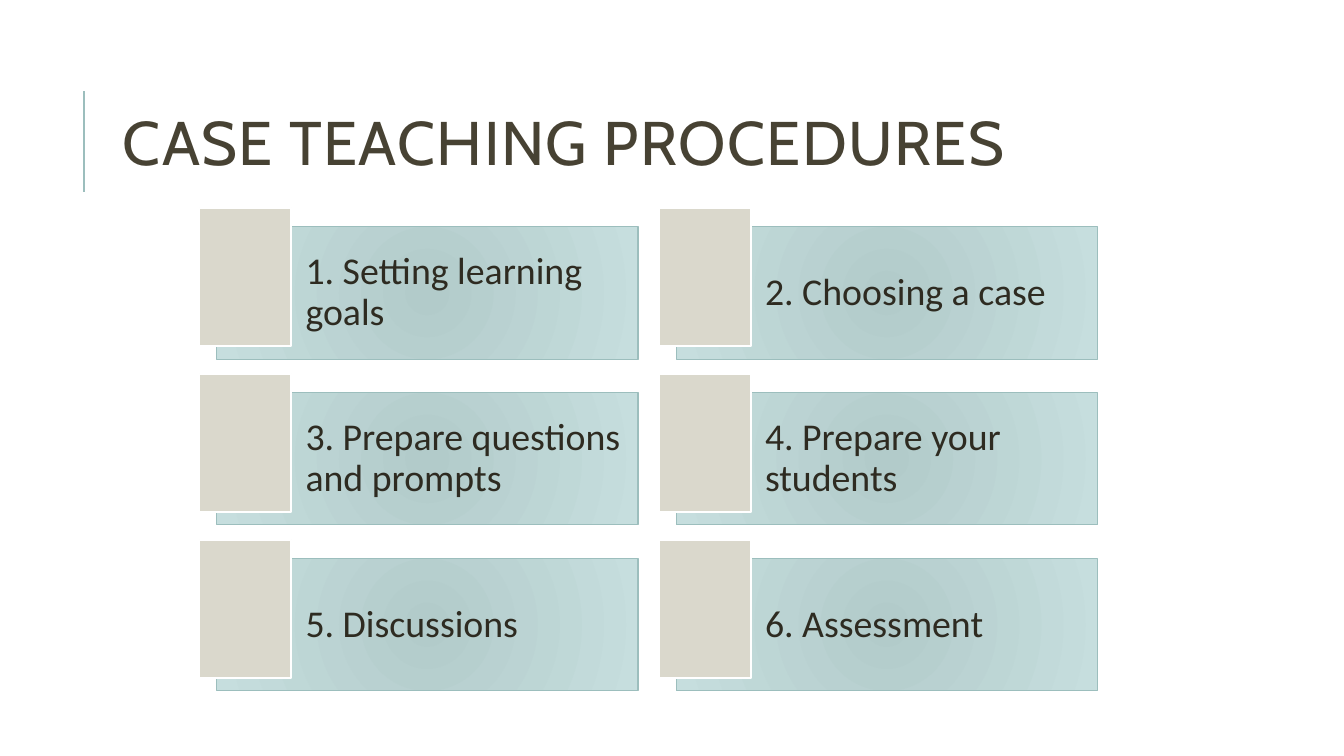
from lxml import etree
from pptx import Presentation
from pptx.dml.color import RGBColor
from pptx.enum import shapes, text
from pptx.oxml import ns
from pptx.util import Cm, Pt

TITLE = "CASE TEACHING PROCEDURES"
STEPS = [
    "1. Setting learning goals",
    "2. Choosing a case",
    "3. Prepare questions and prompts",
    "4. Prepare your students",
    "5. Discussions",
    "6. Assessment",
]

TITLE_COLOR = RGBColor(0x47, 0x42, 0x33)
STEP_COLOR = RGBColor(0x2E, 0x2B, 0x21)
TEAL = RGBColor(0x9C, 0xBE, 0xBD)
CARD_CENTER = RGBColor(0xB2, 0xCB, 0xCA)
CARD_EDGE = RGBColor(0xC6, 0xDE, 0xDE)
TAB_FILL = RGBColor(0xDA, 0xD8, 0xCC)
WHITE = RGBColor(0xFF, 0xFF, 0xFF)

COLUMNS = 2
CARD_LEFT, CARD_TOP = 5.46, 5.72
CARD_WIDTH, CARD_HEIGHT = 10.62, 3.33
COLUMN_STEP, ROW_STEP = 11.58, 4.18
TAB_SHIFT_X, TAB_SHIFT_Y = 0.43, 0.48
TAB_WIDTH, TAB_HEIGHT = 2.31, 3.48


def add_box(page, left, top, width, height, line_color, line_width):
    box = page.shapes.add_shape(
        shapes.MSO_SHAPE.RECTANGLE, Cm(left), Cm(top), Cm(width), Cm(height))
    box.shadow.inherit = False
    box.line.color.rgb = line_color
    box.line.width = Pt(line_width)
    return box


def fill_radial(box, center, edge):
    box.fill.gradient()
    for stop, color in zip(box.fill.gradient_stops, (center, edge)):
        stop.color.rgb = color
    gradient = box._element.spPr.find(ns.qn("a:gradFill"))
    gradient.remove(gradient.find(ns.qn("a:lin")))
    circle = etree.SubElement(gradient, ns.qn("a:path"), {"path": "circle"})
    etree.SubElement(circle, ns.qn("a:fillToRect"), dict.fromkeys("ltrb", "50000"))


def style_text(frame, words, font_name, size, color, spacing):
    frame.text = words
    frame.word_wrap = True
    frame.auto_size = text.MSO_AUTO_SIZE.NONE
    frame.vertical_anchor = text.MSO_ANCHOR.MIDDLE
    para = frame.paragraphs[0]
    para.alignment = text.PP_ALIGN.LEFT
    para.line_spacing = spacing
    para.font.name = font_name
    para.font.size = Pt(size)
    para.font.color.rgb = color
    return para


def add_title(page):
    rule = page.shapes.add_connector(
        shapes.MSO_CONNECTOR.STRAIGHT, Cm(2.12), Cm(4.83), Cm(2.12), Cm(2.29))
    rule.line.color.rgb = TEAL
    rule.line.width = Pt(1.5)
    etree.SubElement(rule._element.spPr, ns.qn("a:effectLst"))

    title = page.shapes.title
    title.left, title.top = Cm(2.84), Cm(1.63)
    title.width, title.height = Cm(27), Cm(4.17)
    para = style_text(title.text_frame, TITLE, "Cabin", 44, TITLE_COLOR, 0.8)
    para.runs[0].font._element.set("spc", "100")


def add_step(page, index, words):
    row, column = divmod(index, COLUMNS)
    left = CARD_LEFT + column * COLUMN_STEP
    top = CARD_TOP + row * ROW_STEP

    card = add_box(page, left, top, CARD_WIDTH, CARD_HEIGHT, TEAL, 0.75)
    fill_radial(card, CARD_CENTER, CARD_EDGE)
    frame = card.text_frame
    style_text(frame, words, "Calibri", 27, STEP_COLOR, 0.9)
    frame.margin_left = Cm(2.24)
    frame.margin_top = frame.margin_right = frame.margin_bottom = Cm(0.28)

    tab = add_box(page, left - TAB_SHIFT_X, top - TAB_SHIFT_Y,
                  TAB_WIDTH, TAB_HEIGHT, WHITE, 1.25)
    tab.fill.solid()
    tab.fill.fore_color.rgb = TAB_FILL


def main():
    deck = Presentation()
    deck.slide_width, deck.slide_height = Cm(33.87), Cm(19.05)
    page = deck.slides.add_slide(deck.slide_layouts.get_by_name("Title Only"))
    add_title(page)
    for index, words in enumerate(STEPS):
        add_step(page, index, words)
    deck.save("out.pptx")


if __name__ == "__main__":
    main()
